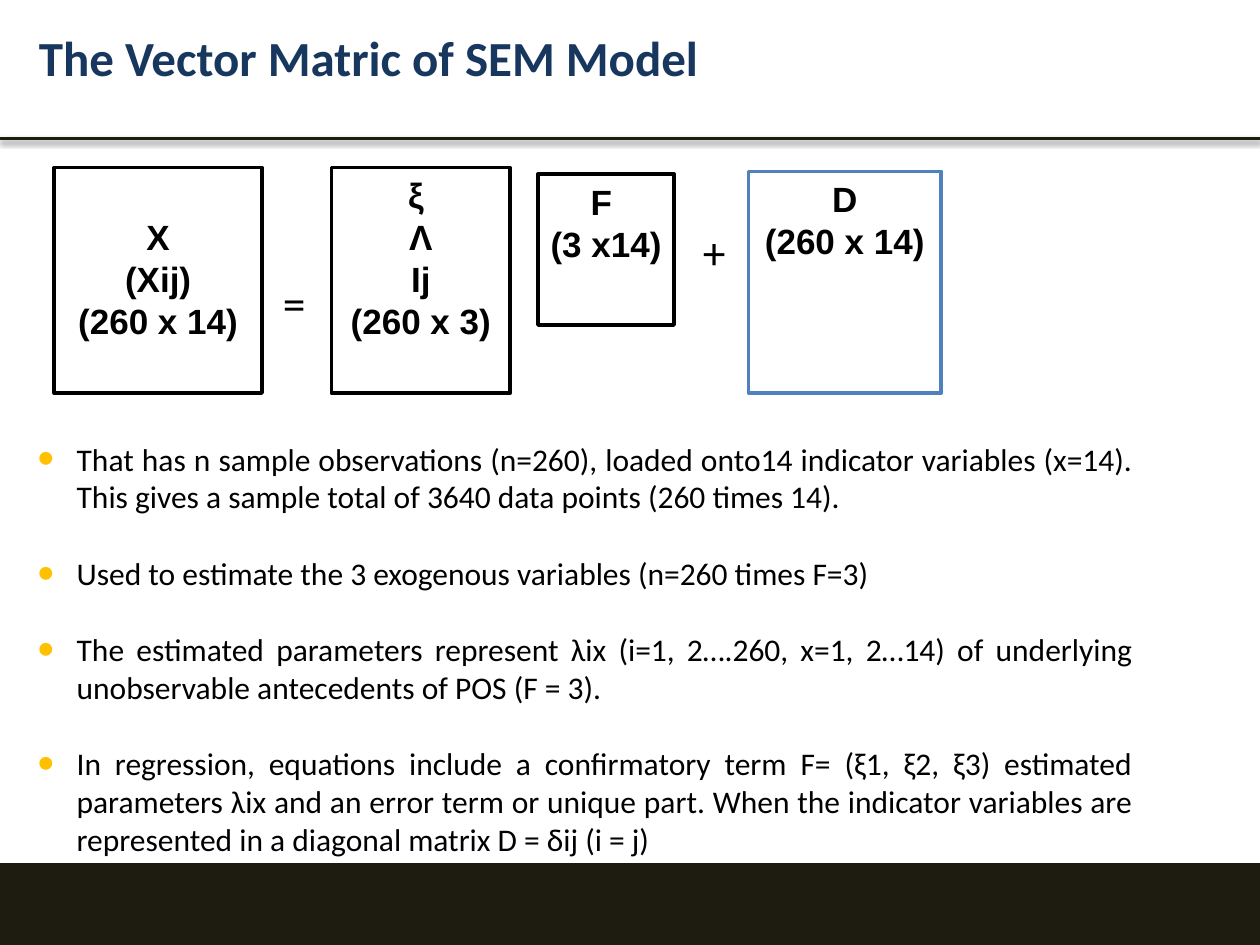
"""Builds the slide on the vector matrix of the SEM model."""
from lxml.etree import SubElement
from pptx import Presentation
from pptx.dml.color import RGBColor
from pptx.enum.shapes import MSO_CONNECTOR, MSO_SHAPE
from pptx.enum.text import MSO_ANCHOR, MSO_AUTO_SIZE, PP_ALIGN
from pptx.oxml.ns import qn
from pptx.util import Inches, Pt

BLACK = RGBColor(0x00, 0x00, 0x00)
WHITE = RGBColor(0xFF, 0xFF, 0xFF)
DARK = RGBColor(0x1E, 0x1C, 0x11)
NAVY = RGBColor(0x17, 0x37, 0x5E)
BLUE = RGBColor(0x4F, 0x81, 0xBD)
GOLD = RGBColor(0xFF, 0xC0, 0x00)

WIDTH, HEIGHT = 10, 7.5
RULE_Y, FOOTER_Y = 1.1, 6.85
INDENT = 0.31

TITLE = "The Vector Matric of SEM Model"
MATRICES = [
    ((0.43, 1.33, 1.65, 1.79), BLACK, 0.38, ["X", "(Xij)", "(260 x 14)"]),
    ((2.63, 1.33, 1.42, 1.79), BLACK, 0.05, ["ξ ", "Λ", "Ij", "(260 x 3)"]),
    ((4.27, 1.38, 1.08, 1.2), BLACK, 0.05, ["F ", "(3 x14)"]),
    ((5.94, 1.36, 1.53, 1.76), BLUE, 0.05, ["D", "(260 x 14)"]),
]
OPERATORS = [
    ((2.12, 2.13, 0.43, 0.86), "="),
    ((5.48, 1.73, 0.37, 0.57), "+"),
]
BULLETS = [
    "That has n sample observations (n=260), loaded onto14 indicator variables (x=14). "
    "This gives a sample total of 3640 data points (260 times 14). ",
    "Used to estimate the 3 exogenous variables (n=260 times F=3)",
    "The estimated parameters represent λix (i=1, 2….260, x=1, 2…14) of underlying "
    "unobservable antecedents of POS (F = 3). ",
    "In regression, equations include a confirmatory term F= (ξ1, ξ2, ξ3) estimated "
    "parameters λix and an error term or unique part. When the indicator variables are "
    "represented in a diagonal matrix D = δij (i = j)",
]


def add_box(s, box, fill, line=None):
    sp = s.shapes.add_shape(MSO_SHAPE.RECTANGLE, *map(Inches, box))
    sp.shadow.inherit = False
    sp.fill.solid()
    sp.fill.fore_color.rgb = fill
    if line is None:
        sp.line.fill.background()
    else:
        sp.line.color.rgb = line
        sp.line.width = Pt(2)
    return sp


def add_textbox(s, box, wrap):
    tf = s.shapes.add_textbox(*map(Inches, box)).text_frame
    tf.word_wrap = wrap
    tf.auto_size = MSO_AUTO_SIZE.SHAPE_TO_FIT_TEXT
    return tf


def write(tf, lines, size, font, color=BLACK, bold=False, align=PP_ALIGN.LEFT):
    tf.vertical_anchor = MSO_ANCHOR.TOP
    for i, text in enumerate(lines):
        p = tf.add_paragraph() if i else tf.paragraphs[0]
        p.alignment = align
        r = p.add_run()
        r.text = text
        r.font.size, r.font.name, r.font.bold = Pt(size), font, bold
        r.font.color.rgb = color


def add_rule(s):
    rule = s.shapes.add_connector(MSO_CONNECTOR.STRAIGHT, 0, Inches(RULE_Y),
                                  Inches(WIDTH), Inches(RULE_Y))
    rule.line.color.rgb = DARK
    rule.line.width = Pt(2)
    effects = SubElement(rule._element.spPr, qn("a:effectLst"))
    shadow = SubElement(effects, qn("a:outerShdw"), blurRad=str(Pt(3.1)),
                        dist=str(Pt(1.6)), dir="5400000", rotWithShape="0")
    color = SubElement(shadow, qn("a:srgbClr"), val=str(BLACK))
    SubElement(color, qn("a:alpha"), val="38000")


def add_bullet(p):
    pPr = p._p.get_or_add_pPr()
    pPr.set("marL", str(Inches(INDENT)))
    pPr.set("indent", str(-Inches(INDENT)))
    SubElement(SubElement(pPr, qn("a:buClr")), qn("a:srgbClr"), val=str(GOLD))
    SubElement(pPr, qn("a:buSzPct"), val="150000")
    SubElement(pPr, qn("a:buFont"), typeface="Arial")
    SubElement(pPr, qn("a:buChar"), char="•")


def main():
    prs = Presentation()
    prs.slide_width, prs.slide_height = Inches(WIDTH), Inches(HEIGHT)
    s = prs.slides.add_slide(prs.slide_layouts[6])

    add_rule(s)
    add_box(s, (0, FOOTER_Y, WIDTH, HEIGHT - FOOTER_Y), DARK)
    write(add_textbox(s, (0.21, 0.17, 5.5, 0.57), False), [TITLE], 28, "Calibri", NAVY, True)

    for box, sign in OPERATORS:
        write(add_box(s, box, WHITE).text_frame, [sign], 26, "Calibri", align=PP_ALIGN.CENTER)
    for box, line, top, lines in MATRICES:
        tf = add_box(s, box, WHITE, line).text_frame
        tf.margin_top = Inches(top)
        write(tf, lines, 20, "Arial", bold=True, align=PP_ALIGN.CENTER)

    tf = add_textbox(s, (0.2, 3.44, 8.89, 3.43), True)
    write(tf, BULLETS, 18, "Calibri", align=PP_ALIGN.JUSTIFY)
    for p in tf.paragraphs:
        p.space_after = Pt(22 if p.text != BULLETS[-1] else 0)
        add_bullet(p)

    prs.save("out.pptx")


if __name__ == "__main__":
    main()
